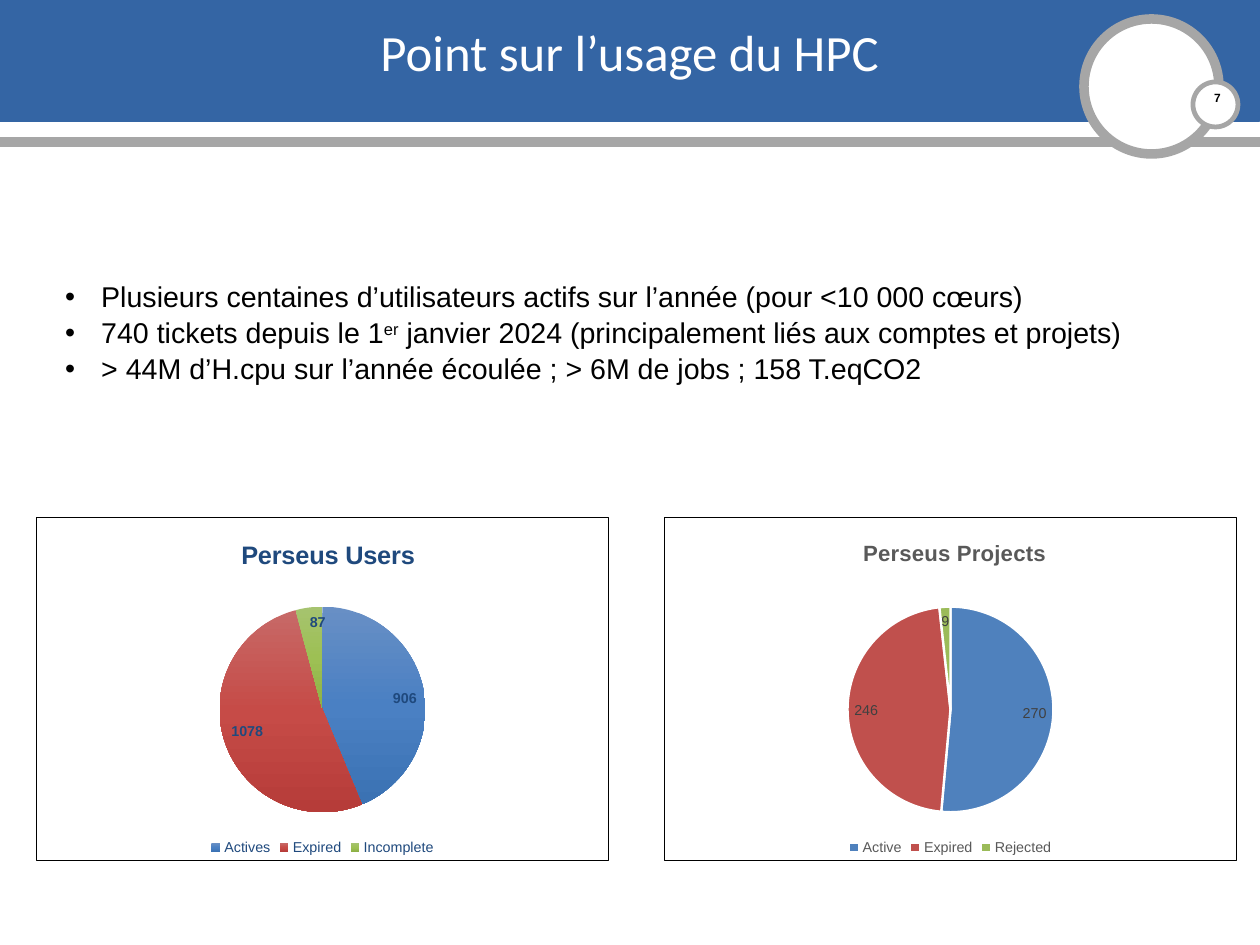
from copy import deepcopy

from lxml import etree
from pptx import Presentation
from pptx.chart.data import CategoryChartData
from pptx.dml.color import RGBColor
from pptx.enum.chart import XL_CHART_TYPE, XL_LABEL_POSITION, XL_LEGEND_POSITION
from pptx.enum.shapes import MSO_CONNECTOR, MSO_SHAPE
from pptx.enum.text import MSO_ANCHOR, PP_ALIGN
from pptx.oxml import parse_xml
from pptx.oxml.ns import nsdecls, qn
from pptx.util import Pt

PIE = XL_CHART_TYPE.PIE
INSIDE_END = XL_LABEL_POSITION.INSIDE_END
BOTTOM = XL_LEGEND_POSITION.BOTTOM
STRAIGHT = MSO_CONNECTOR.STRAIGHT
RECTANGLE, OVAL = MSO_SHAPE.RECTANGLE, MSO_SHAPE.OVAL
TOP, MIDDLE = MSO_ANCHOR.TOP, MSO_ANCHOR.MIDDLE
LEFT, CENTER = PP_ALIGN.LEFT, PP_ALIGN.CENTER

PX = 8000  # EMU
WIDTH, HEIGHT = 1260, 945
CHART_WIDTH, CHART_HEIGHT = 573, 344

BLACK = RGBColor(0, 0, 0)
WHITE = RGBColor(255, 255, 255)
BANNER_BLUE = RGBColor(0x34, 0x65, 0xA4)
RING_GREY = RGBColor(0xA6, 0xA6, 0xA6)
NAVY = RGBColor(0x1F, 0x49, 0x7D)
DARK_GREY = RGBColor(0x59, 0x59, 0x59)
LABEL_GREY = RGBColor(0x40, 0x40, 0x40)
USER_GRADIENTS = [
    (RGBColor(0x68, 0x8F, 0xC5), RGBColor(0x4A, 0x80, 0xC3), RGBColor(0x3B, 0x72, 0xB3)),
    (RGBColor(0xC7, 0x69, 0x67), RGBColor(0xC6, 0x4B, 0x47), RGBColor(0xB6, 0x3C, 0x39)),
    (RGBColor(0xA6, 0xC3, 0x6F), RGBColor(0x9D, 0xC0, 0x54), RGBColor(0x8D, 0xB0, 0x45)),
]
PROJECT_COLORS = [
    (RGBColor(0x4F, 0x81, 0xBD),),
    (RGBColor(0xC0, 0x50, 0x4D),),
    (RGBColor(0x9B, 0xBB, 0x59),),
]


def set_font(font, size, color, bold=False, name="Arial"):
    for attribute, value in {"size": Pt(size), "bold": bold, "name": name}.items():
        setattr(font, attribute, value)
    font.color.rgb = color


def set_layout(part, index, **fractions):
    """Give a chart part a manual position, as fractions of the chart."""
    for old in part.findall(qn("c:layout")):
        part.remove(old)
    layout = parse_xml(f"<c:layout {nsdecls('c')}><c:manualLayout/></c:layout>")
    manual = layout[0]
    if "w" in fractions:
        etree.SubElement(manual, qn("c:layoutTarget")).set("val", "inner")
    for axis in "xy":
        etree.SubElement(manual, qn(f"c:{axis}Mode")).set("val", "edge")
    for key, value in fractions.items():
        etree.SubElement(manual, qn(f"c:{key}")).set("val", str(value))
    part.insert(index, layout)


deck = Presentation()
deck.slide_width, deck.slide_height = WIDTH * PX, HEIGHT * PX
slide = deck.slides.add_slide(deck.slide_layouts[6])
shapes = slide.shapes

# Banner
rule = shapes.add_connector(STRAIGHT, 0, 142 * PX, WIDTH * PX, 142 * PX)
rule.line.color.rgb = RING_GREY
rule.line.width = Pt(6)
etree.SubElement(rule._element.spPr, qn("a:effectLst"))

for preset, box, fill, outline, weight in [
    (RECTANGLE, (0, 0, WIDTH, 121), BANNER_BLUE, BANNER_BLUE, 0.75),
    (OVAL, (1084, 19, 135, 135), WHITE, RING_GREY, 6),
    (OVAL, (1193, 82, 45, 45), WHITE, RING_GREY, 3),
]:
    shape = shapes.add_shape(preset, *(length * PX for length in box))
    shape.shadow.inherit = False
    shape.fill.solid()
    shape.fill.fore_color.rgb = fill
    shape.line.color.rgb = outline
    shape.line.width = Pt(weight)

# Texts: each paragraph is a list of (text, baseline) runs
TITLE = [[("Point sur l’usage du HPC", 0)]]
PAGE_NUMBER = [[("7", 0)]]
USAGE_POINTS = [
    [("Plusieurs centaines d’utilisateurs actifs sur l’année (pour <10 000 cœurs)", 0)],
    [
        ("740 tickets depuis le 1", 0),
        ("er", 30000),
        (" janvier 2024 (principalement liés aux comptes et projets)", 0),
    ],
    [("> 44M d’H.cpu sur l’année écoulée ; > 6M de jobs ; 158 T.eqCO2", 0)],
]
for box, paragraphs, anchor, align, bulleted, style in [
    ((193, 15, 874, 73), TITLE, TOP, CENTER, False, (32, WHITE, False, "Calibri")),
    ((1188, 86, 59, 24), PAGE_NUMBER, MIDDLE, CENTER, False, (7.5, BLACK, True)),
    ((54, 272, 1152, 185), USAGE_POINTS, TOP, LEFT, True, (18, BLACK)),
]:
    frame = shapes.add_textbox(*(length * PX for length in box)).text_frame
    frame.word_wrap = True
    frame.vertical_anchor = anchor
    if paragraphs is PAGE_NUMBER:
        for side in ("left", "top", "right", "bottom"):
            setattr(frame, f"margin_{side}", 0)
    for number, runs in enumerate(paragraphs):
        paragraph = frame.add_paragraph() if number else frame.paragraphs[0]
        paragraph.alignment = align
        if bulleted:
            properties = paragraph._p.get_or_add_pPr()
            properties.set("marL", str(36 * PX))
            properties.set("indent", str(-36 * PX))
            etree.SubElement(properties, qn("a:buFont")).set("typeface", "Arial")
            etree.SubElement(properties, qn("a:buChar")).set("char", "•")
            paragraph.line_spacing = 1.05
        for text, baseline in runs:
            run = paragraph.add_run()
            run.text = text
            set_font(run.font, *style)
            if baseline:
                run._r.get_or_add_rPr().set("baseline", str(baseline))

# Pie charts
for left, title, title_x, title_style, counts, colors, label_style, legend_color in [
    (36, "Perseus Users", 0.35, (16, NAVY, True),
     {"Actives": 906, "Expired": 1078, "Incomplete": 87},
     USER_GRADIENTS, (9, NAVY, True), NAVY),
    (664, "Perseus Projects", 0.34, (14, DARK_GREY, True),
     {"Active": 270, "Expired": 246, "Rejected": 9},
     PROJECT_COLORS, (9, LABEL_GREY), DARK_GREY),
]:
    data = CategoryChartData()
    data.categories = list(counts)
    data.add_series("Series 1", list(counts.values()))
    chart = shapes.add_chart(
        PIE, left * PX, 517 * PX, CHART_WIDTH * PX, CHART_HEIGHT * PX, data
    ).chart
    set_font(chart.font, 10, BLACK)

    chart.has_title = True
    title_frame = chart.chart_title.text_frame
    title_frame.text = title
    set_font(title_frame.paragraphs[0].runs[0].font, *title_style)
    set_layout(chart.chart_title._element, 1, x=title_x, y=0.05)

    chart.has_legend = True
    chart.legend.position = BOTTOM
    chart.legend.include_in_layout = False
    set_font(chart.legend.font, 9, legend_color)

    plot = chart.plots[0]
    plot.vary_by_categories = True
    plot.has_data_labels = True
    labels = plot.data_labels
    labels.show_value = True
    labels.show_percentage = False
    labels.position = INSIDE_END
    set_font(labels.font, *label_style)

    series = plot.series[0]
    for index, shades in enumerate(colors):
        slice_format = series.points[index].format
        fill = slice_format.fill
        if len(shades) == 1:
            fill.solid()
            fill.fore_color.rgb = shades[0]
            slice_format.line.color.rgb = WHITE
            slice_format.line.width = Pt(1.5)
            continue
        fill.gradient()
        fill.gradient_angle = 270
        stop_list = series._element.xpath(".//a:gsLst")[-1]
        stop_list.insert(1, deepcopy(stop_list[0]))
        for stop, shade, position in zip(fill.gradient_stops, shades, (0, 0.5, 1)):
            stop.color.rgb = shade
            stop.position = position

    chart_part = chart._chartSpace.chart
    set_layout(chart_part.plotArea, 0, x=0.32, y=0.26, w=0.36, h=0.6)
    chart_part.addprevious(parse_xml(f'<c:roundedCorners {nsdecls("c")} val="0"/>'))
    chart_part.addnext(parse_xml(
        f'<c:spPr {nsdecls("c", "a")}>'
        f'<a:solidFill><a:srgbClr val="{WHITE}"/></a:solidFill>'
        f'<a:ln w="{Pt(0.75)}"><a:solidFill><a:srgbClr val="{BLACK}"/></a:solidFill></a:ln>'
        "</c:spPr>"
    ))

deck.save("out.pptx")
